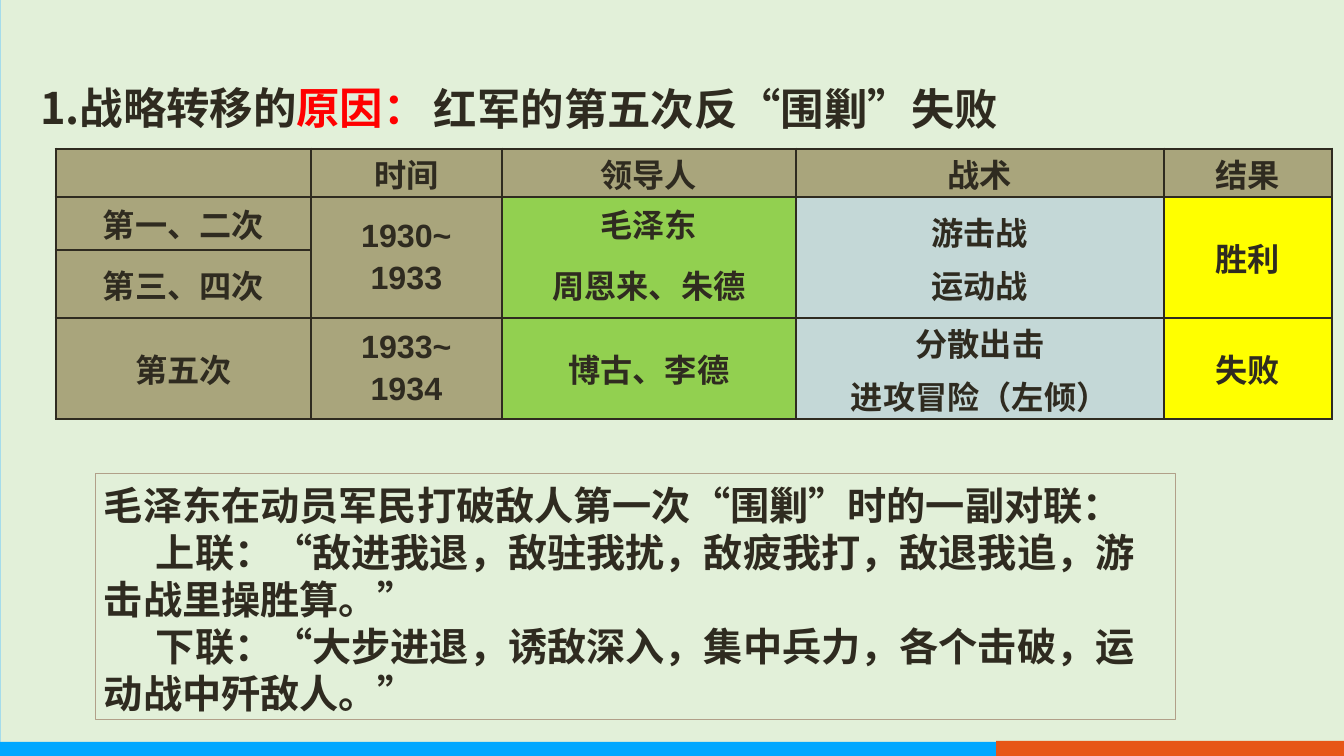
import pptx
import pptx.dml.color
import pptx.enum.lang
import pptx.enum.shapes
import pptx.enum.text
import pptx.oxml
import pptx.oxml.ns
import pptx.util

SCALE = 914400 / 100.8
SANS = "Noto Sans CJK SC"
COLORS = {
    "sky": "9DDAEE", "pale": "E2F0D9", "blue": "00A7FF", "orange": "E75617",
    "ink": "2F2B20", "red": "FF0000", "olive": "A9A57C", "green": "92D050",
    "mist": "C4D8D7", "yellow": "FFFF00", "tan": "B1A089",
}
COLS = [255, 191, 294, 368, 168]
ROWS = [48, 53, 0, 68, 101]
EDGES = {"x": [2.25, 1, 1, 1.5, 2.25, 2.25], "y": [2.25, 1, 0, 1, 1.5, 1.5]}
FILLS = ["olive", "olive", "green", "mist", "yellow"]
CELLS = [
    (0, 0, 1, []),
    (0, 1, 1, ["时间"]),
    (0, 2, 1, ["领导人"]),
    (0, 3, 1, ["战术"]),
    (0, 4, 1, ["结果"]),
    (1, 0, 2, ["第一、二次"]),
    (1, 1, 3, ["1930~", "1933"]),
    (1, 2, 1, ["毛泽东"]),
    (1, 3, 3, ["游击战", "运动战"]),
    (1, 4, 3, ["胜利"]),
    (2, 2, 2, ["周恩来、朱德"]),
    (3, 0, 1, ["第三、四次"]),
    (4, 0, 1, ["第五次"]),
    (4, 1, 1, ["1933~", "1934"]),
    (4, 2, 1, ["博古、李德"]),
    (4, 3, 1, ["分散出击", "进攻冒险（左倾）"]),
    (4, 4, 1, ["失败"]),
]


def px(n):
    return pptx.util.Emu(round(n * SCALE))


def rgb(name):
    return pptx.dml.color.RGBColor.from_string(COLORS[name])


def apply(item, values):
    for key, value in values.items():
        setattr(item, key, value)


def paint(fill, color):
    fill.solid()
    fill.fore_color.rgb = rgb(color)


def add_run(para, text, size, face=SANS, color="ink"):
    run = para.add_run()
    run.text = text
    apply(run.font, {
        "size": pptx.util.Pt(size), "name": face, "bold": True,
        "language_id": pptx.enum.lang.MSO_LANGUAGE_ID.SIMPLIFIED_CHINESE,
    })
    run.font.color.rgb = rgb(color)
    asian = pptx.oxml.parse_xml(
        f'<a:ea {pptx.oxml.ns.nsdecls("a")} typeface="{SANS}"/>')
    run.font._element.find(pptx.oxml.ns.qn("a:latin")).addnext(asian)


def add_bar(slide, box, color):
    bar = slide.shapes.add_shape(
        pptx.enum.shapes.MSO_SHAPE.RECTANGLE, *map(px, box))
    bar.shadow.inherit = False
    paint(bar.fill, color)
    bar.line.fill.background()


def add_text(slide, box, paras, size, lead, wrap=True):
    shape = slide.shapes.add_textbox(*map(px, box))
    frame = shape.text_frame
    apply(frame, {
        "word_wrap": wrap, "margin_left": px(9), "margin_right": px(9),
        "margin_top": px(8), "margin_bottom": px(0),
    })
    for i, (indent, runs) in enumerate(paras):
        para = frame.add_paragraph() if i else frame.paragraphs[0]
        para.line_spacing = pptx.util.Pt(lead)
        para._p.get_or_add_pPr().set("indent", str(px(indent)))
        for text, color in runs:
            add_run(para, text, size, color=color)
    return shape


def add_edge(cell, side, width):
    body = f'<a:solidFill><a:srgbClr val="{COLORS["ink"]}"/></a:solidFill>'
    edge = pptx.oxml.parse_xml(
        f'<a:ln{side} {pptx.oxml.ns.nsdecls("a")} '
        f'w="{pptx.util.Pt(width)}">{body if width else "<a:noFill/>"}'
        f'</a:ln{side}>')
    cell._tc.get_or_add_tcPr().append(edge)


def fill_cell(table, row, col, span, lines):
    cell = table.cell(row, col)
    if span > 1:
        cell.merge(table.cell(row + span - 1, col))
    sides = {
        "L": EDGES["x"][col], "R": EDGES["x"][col + 1],
        "T": EDGES["y"][row], "B": EDGES["y"][row + span],
    }
    for side, width in sides.items():
        add_edge(cell, side, width)
    for i in range(span):
        paint(table.cell(row + i, col).fill, FILLS[col] if row else "olive")
    apply(cell, {
        "margin_left": px(11), "margin_right": px(11),
        "margin_top": 0, "margin_bottom": 0,
        "vertical_anchor": pptx.enum.text.MSO_ANCHOR.MIDDLE,
    })
    frame = cell.text_frame
    for i, text in enumerate(lines):
        para = frame.add_paragraph() if i else frame.paragraphs[0]
        para.alignment = pptx.enum.text.PP_ALIGN.CENTER
        if i:
            para.space_before = pptx.util.Pt(4.6)
        add_run(para, text, 23, "Arial")


def add_grid(slide):
    table = slide.shapes.add_table(
        len(ROWS), len(COLS), px(56), px(149),
        px(sum(COLS)), px(sum(ROWS))).table
    apply(table, {"first_row": False, "horz_banding": False})
    for col, width in zip(table.columns, COLS):
        col.width = px(width)
    for row, height in zip(table.rows, ROWS):
        row.height = px(height)
    for entry in CELLS:
        fill_cell(table, *entry)


def main():
    deck = pptx.Presentation()
    apply(deck, {"slide_width": px(1344), "slide_height": px(756)})
    slide = deck.slides.add_slide(deck.slide_layouts[6])
    paint(slide.background.fill, "sky")
    add_bar(slide, (1, 0, 1343, 756), "pale")
    add_bar(slide, (0, 742, 996, 14), "blue")
    add_bar(slide, (996, 741, 348, 15), "orange")
    add_text(slide, (425, 74, 807, 61),
             [(0, [("红军的第五次反“围剿”失败", "ink")])], 31, 37)
    add_text(slide, (31, 73, 413, 61),
             [(0, [("1.战略转移的", "ink"), ("原因：", "red")])], 31, 37, False)
    add_grid(slide)
    verse = add_text(slide, (95, 473, 1080, 246), [
        (0, [("毛泽东在动员军民打破敌人第一次“围剿”时的一副对联：", "ink")]),
        (52, [("上联：“敌进我退，敌驻我扰，敌疲我打，敌退我追，游击战里操胜算。”", "ink")]),
        (52, [("下联：“大步进退，诱敌深入，集中兵力，各个击破，运动战中歼敌人。”", "ink")]),
    ], 28, 33.6)
    verse.line.color.rgb = rgb("tan")
    verse.line.width = pptx.util.Pt(0.5)
    deck.save("out.pptx")


if __name__ == "__main__":
    main()
